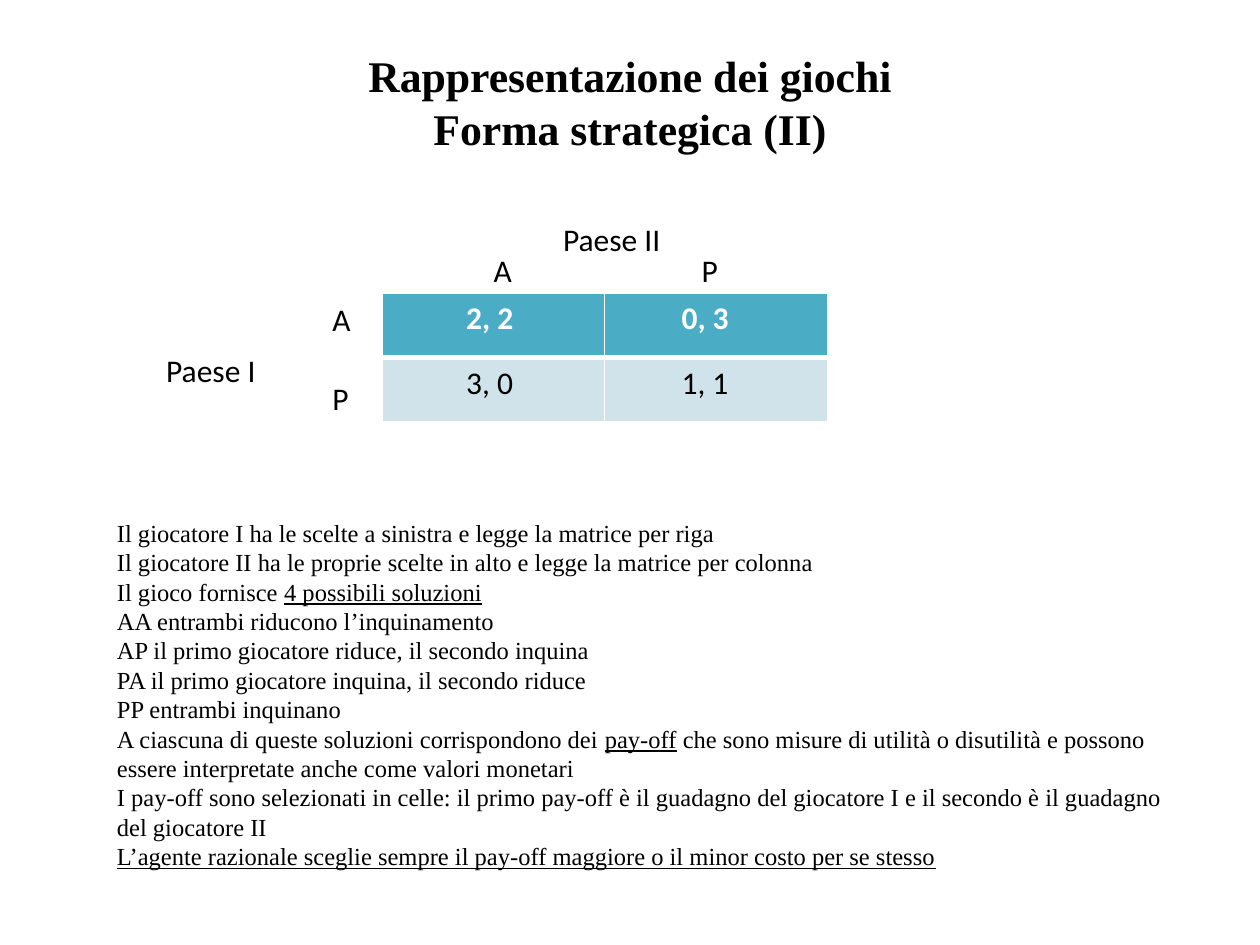
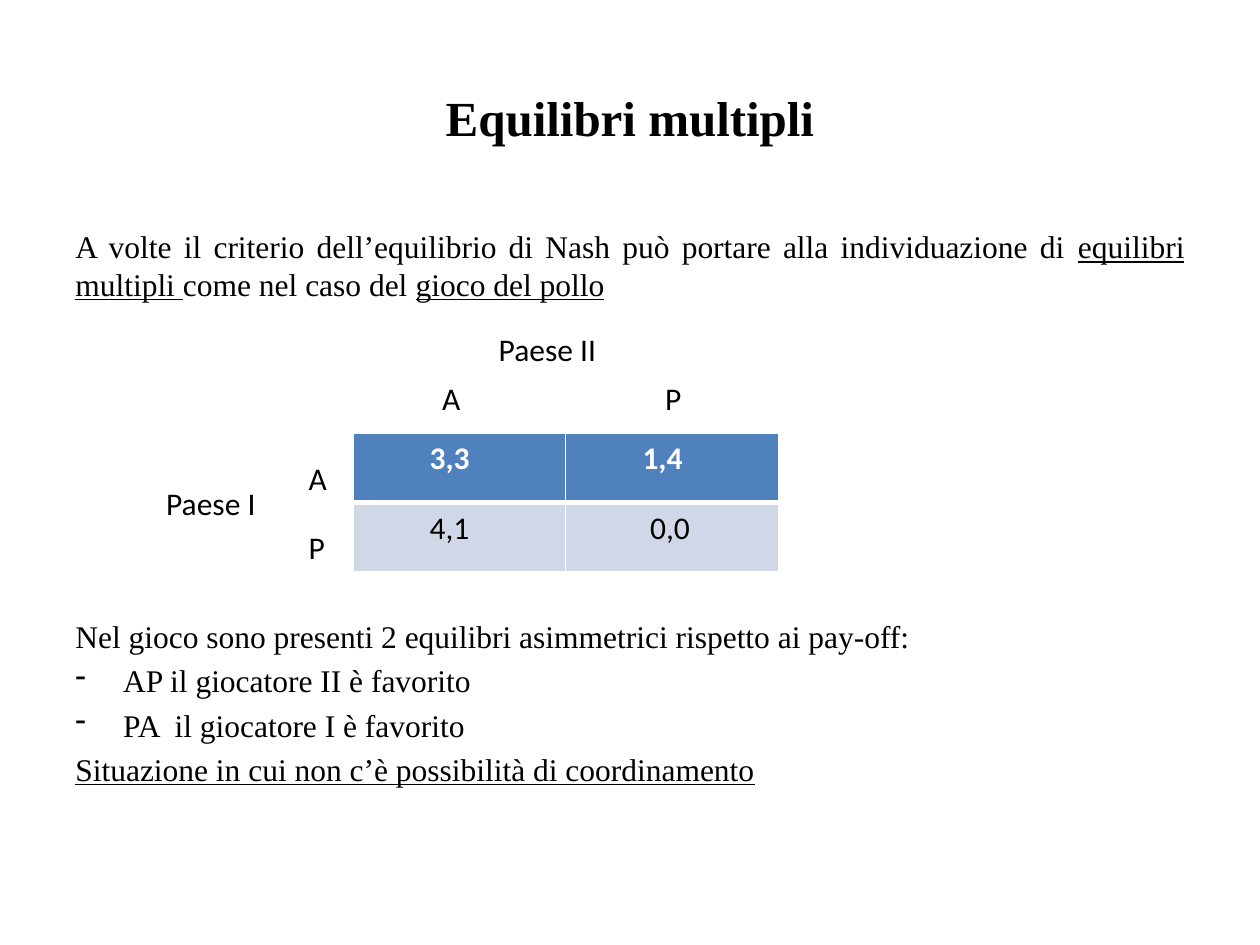
import pptx
import pptx.dml.color
import pptx.enum.text
import pptx.oxml
import pptx.oxml.ns
import pptx.util

Inches = pptx.util.Inches
Pt = pptx.util.Pt
ALIGN = pptx.enum.text.PP_ALIGN
ANCHOR = pptx.enum.text.MSO_ANCHOR

COLOURS = {
    "text": "000000",
    "white": "FFFFFF",
    "teal": "4BACC6",
    "pale_teal": "D0E3EA",
    "blue": "4F81BD",
    "pale_blue": "D0D8E8",
}
SERIF = "Times New Roman"
SANS = "Calibri"
LABEL_HEIGHT = 0.4

STRATEGIC_NOTES = [
    "Il giocatore I ha le scelte a sinistra e legge la matrice per riga",
    "Il giocatore II ha le proprie scelte in alto e legge la matrice per colonna",
    "Il gioco fornisce |4 possibili soluzioni",
    "AA entrambi riducono l’inquinamento",
    "AP il primo giocatore riduce, il secondo inquina",
    "PA il primo giocatore inquina, il secondo riduce",
    "PP entrambi inquinano",
    "A ciascuna di queste soluzioni corrispondono dei |pay-off| che sono misure di utilità "
    "o disutilità e possono essere interpretate anche come valori monetari",
    "I pay-off sono selezionati in celle: il primo pay-off è il guadagno del giocatore I "
    "e il secondo è il guadagno del giocatore II",
    "|L’agente razionale sceglie sempre il pay-off maggiore o il minor costo per se stesso",
]
NASH_INTRO = [
    "A volte il criterio dell’equilibrio di Nash può portare alla individuazione di "
    "|equilibri multipli |come nel caso del |gioco del pollo",
]
NASH_NOTES = [
    "Nel gioco sono presenti 2 equilibri asimmetrici rispetto ai pay-off:",
    "- AP il giocatore II è favorito",
    "- PA  il giocatore I è favorito",
    "|Situazione in cui non c’è possibilità di coordinamento",
]

STRATEGIC_GAME = {
    "fills": ("teal", "pale_teal"),
    "payoffs": [["2, 2", "0, 3"], ["3, 0", "1, 1"]],
    "indents": [[0.67, 0.61], [0.67, 0.61]],
    "labels": [
        ("A", -0.49, 0), ("P", -0.49, 0.63), ("Paese I", -1.81, 0.41),
        ("A", 0.79, -0.39), ("P", 2.44, -0.39), ("Paese II", 1.34, -0.63),
    ],
}
CHICKEN_GAME = {
    "fills": ("blue", "pale_blue"),
    "payoffs": [["3,3", "1,4"], ["4,1", "0,0"]],
    "indents": [[0.61, 0.61], [0.61, 0.67]],
    "labels": [
        ("A", -0.45, 0.15), ("P", -0.45, 0.7), ("Paese I", -1.58, 0.35),
        ("A", 0.61, -0.48), ("P", 2.38, -0.48), ("Paese II", 1.06, -0.87),
    ],
}


def style_runs(para, size, font, colour="text", bold=False):
    """Apply one font style to every run of a paragraph."""
    for span in para.runs:
        span.font.size = Pt(size)
        span.font.name = font
        span.font.bold = bold
        span.font.color.rgb = pptx.dml.color.RGBColor.from_string(COLOURS[colour])


def add_box(page, box):
    """Add an empty wrapping text box and return its text frame."""
    frame = page.shapes.add_textbox(*map(Inches, box)).text_frame
    frame.word_wrap = True
    return frame


def add_title(page, box, text, size):
    """Add a bold centred title."""
    frame = add_box(page, box)
    frame.vertical_anchor = ANCHOR.MIDDLE
    frame.text = text
    for para in frame.paragraphs:
        para.alignment = ALIGN.CENTER
        style_runs(para, size, SERIF, bold=True)


def add_dash(para):
    """Give a paragraph a hanging dash bullet."""
    properties = para._p.get_or_add_pPr()
    properties.set("marL", str(Inches(0.38)))
    properties.set("indent", str(Inches(-0.38)))
    bullet = pptx.oxml.parse_xml(f'<a:buChar {pptx.oxml.ns.nsdecls("a")} char="-"/>')
    properties.append(bullet)


def add_notes(page, box, lines, size, align=ALIGN.LEFT, space_before=0):
    """Add paragraphs in which every second part between bars is underlined."""
    frame = add_box(page, box)
    for index, line in enumerate(lines):
        para = frame.add_paragraph() if index else frame.paragraphs[0]
        para.alignment = align
        para.space_before = Pt(space_before)
        if line.startswith("- "):
            add_dash(para)
            line = line[2:]
        for position, part in enumerate(line.split("|")):
            if part:
                span = para.add_run()
                span.text = part
                span.font.underline = position % 2 == 1
        style_runs(para, size, SERIF)


def add_borders(cell, widths):
    """Draw white borders with the given point widths by side."""
    properties = cell._tc.get_or_add_tcPr()
    for side, width in widths.items():
        properties.append(pptx.oxml.parse_xml(
            f'<a:ln{side} {pptx.oxml.ns.nsdecls("a")} w="{Pt(width)}"><a:solidFill>'
            f'<a:srgbClr val="{COLOURS["white"]}"/></a:solidFill></a:ln{side}>'))


def add_game(page, box, game):
    """Add a payoff matrix with its player and strategy labels."""
    left, top, width, height = box
    table = page.shapes.add_table(2, 2, *map(Inches, box)).table
    for row in range(2):
        table.rows[row].height = Inches(height / 2)
        table.columns[row].width = Inches(width / 2)
        for column in range(2):
            cell = table.cell(row, column)
            add_borders(cell, {"L": 1, "R": 1, "T": 3 if row else 1, "B": 1 if row else 3})
            cell.fill.solid()
            cell.fill.fore_color.rgb = pptx.dml.color.RGBColor.from_string(
                COLOURS[game["fills"][row]])
            cell.margin_left = Inches(game["indents"][row][column])
            cell.text_frame.text = game["payoffs"][row][column]
            style_runs(cell.text_frame.paragraphs[0], 18, SANS,
                       "text" if row else "white", row == 0)
    for text, across, down in game["labels"]:
        label_width = 1.38 if text.startswith("Paese") else 0.49
        frame = add_box(page, (left + across, top + down, label_width, LABEL_HEIGHT))
        frame.text = text
        style_runs(frame.paragraphs[0], 18, SANS)


def build_strategic_form(page):
    """Build the slide on the strategic form."""
    add_title(page, (0.5, 0.3, 9, 1.01), "Rappresentazione dei giochi\nForma strategica (II)", 25)
    add_game(page, (3.03, 2.33, 3.54, 1.02), STRATEGIC_GAME)
    add_notes(page, (0.83, 4.06, 8.74, 2.93), STRATEGIC_NOTES, 14)


def build_multiple_equilibria(page):
    """Build the slide on multiple equilibria."""
    add_title(page, (0.5, 0.3, 9, 1.25), "Equilibri multipli", 28)
    add_notes(page, (0.5, 1.75, 9, 0.75), NASH_INTRO, 18, ALIGN.JUSTIFY, 3.6)
    add_game(page, (2.8, 3.44, 3.38, 1.1), CHICKEN_GAME)
    add_notes(page, (0.5, 4.85, 9, 1.85), NASH_NOTES, 18, ALIGN.JUSTIFY, 3.6)


def main():
    """Build and save the deck."""
    deck = pptx.Presentation()
    deck.slide_width = Inches(10)
    deck.slide_height = Inches(7.5)
    for build in (build_strategic_form, build_multiple_equilibria):
        build(deck.slides.add_slide(deck.slide_layouts[6]))
    deck.save("out.pptx")


if __name__ == "__main__":
    main()
